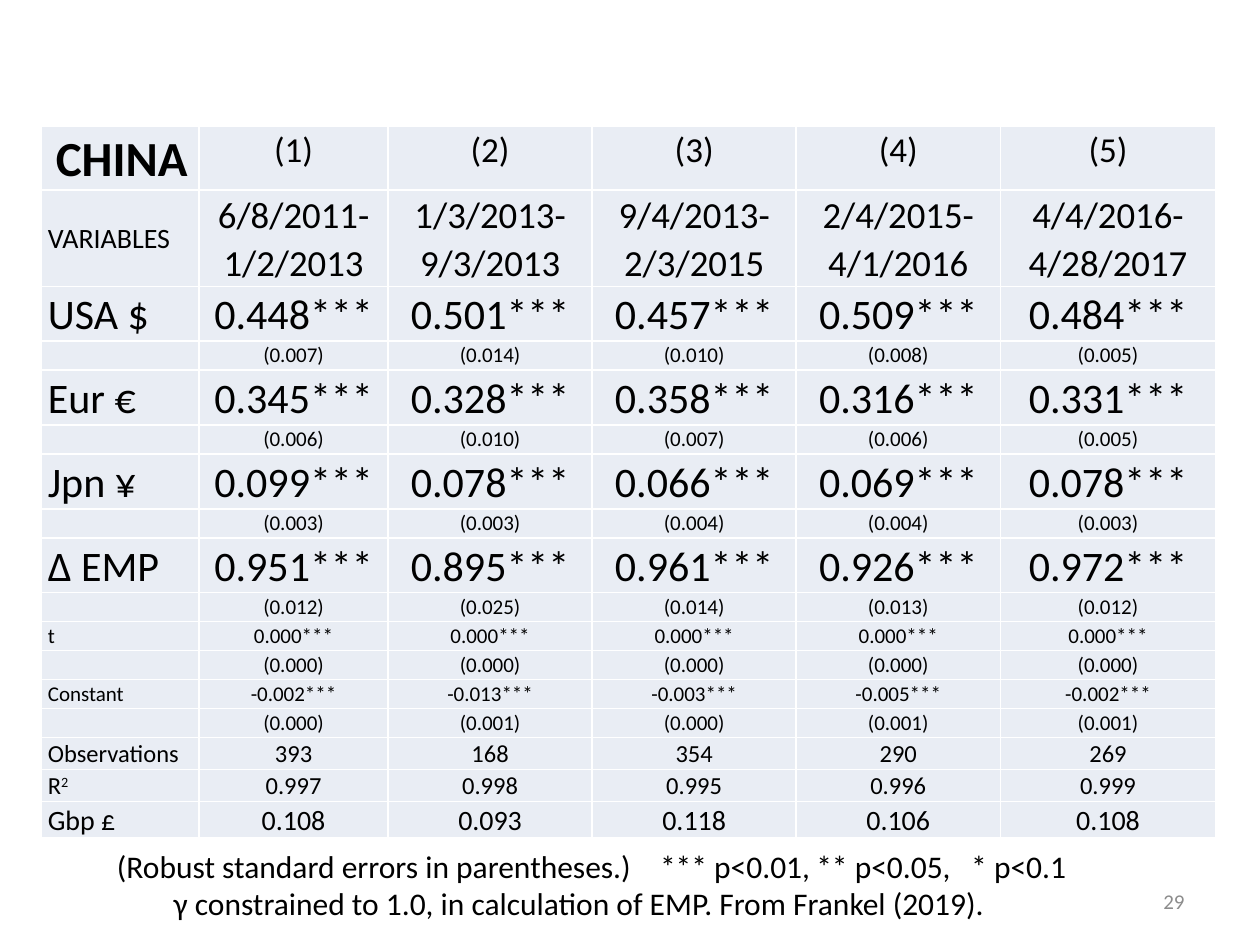
from dataclasses import dataclass

from lxml.etree import SubElement
from pptx import Presentation
from pptx.dml.color import RGBColor
from pptx.enum.text import MSO_ANCHOR as Anchor, PP_ALIGN as Align
from pptx.oxml.ns import qn
from pptx.util import Inches, Pt

FONT = "Calibri"
COLORS = {"text": "000000", "cell": "E9EDF4", "border": "FFFFFF", "number": "8C8C8C"}
COLUMN_WIDTHS = [1.25, 1.5, 1.62, 1.62, 1.62, 1.71]
ROW_HEIGHT = 0.23
PERIOD_ROW_HEIGHT = 0.47


@dataclass
class Run:
    text: str
    size: float
    bold: bool = False
    superscript: bool = False
    color: str = "text"


@dataclass
class TableRow:
    label: list[Run]
    values: list[str]
    size: float
    height: float = ROW_HEIGHT
    label_anchor: Anchor = Anchor.TOP


def value_row(label: str, values: str, size: float) -> TableRow:
    return TableRow([Run(label, size)] if label else [], values.split(), size)


ROWS = [
    TableRow([Run(" ", 20), Run("CHINA", 28, bold=True)],
             [f"({number})" for number in range(1, 6)], 20),
    TableRow([Run("VARIABLES", 16)],
             ["6/8/2011-1/2/2013", "1/3/2013-9/3/2013", "9/4/2013-2/3/2015",
              "2/4/2015-4/1/2016", "4/4/2016-4/28/2017"],
             21, PERIOD_ROW_HEIGHT, Anchor.MIDDLE),
    value_row("USA $", "0.448*** 0.501*** 0.457*** 0.509*** 0.484***", 24),
    value_row("", "(0.007) (0.014) (0.010) (0.008) (0.005)", 12),
    value_row("Eur €", "0.345*** 0.328*** 0.358*** 0.316*** 0.331***", 24),
    value_row("", "(0.006) (0.010) (0.007) (0.006) (0.005)", 12),
    value_row("Jpn ¥", "0.099*** 0.078*** 0.066*** 0.069*** 0.078***", 24),
    value_row("", "(0.003) (0.003) (0.004) (0.004) (0.003)", 12),
    value_row("Δ EMP", "0.951*** 0.895*** 0.961*** 0.926*** 0.972***", 24),
    value_row("", "(0.012) (0.025) (0.014) (0.013) (0.012)", 12),
    value_row("t", "0.000*** 0.000*** 0.000*** 0.000*** 0.000***", 12),
    value_row("", "(0.000) (0.000) (0.000) (0.000) (0.000)", 12),
    value_row("Constant", "-0.002*** -0.013*** -0.003*** -0.005*** -0.002***", 12),
    value_row("", "(0.000) (0.001) (0.000) (0.001) (0.001)", 12),
    value_row("Observations", "393 168 354 290 269", 14),
    TableRow([Run("R", 14), Run("2", 14, superscript=True)],
             ["0.997", "0.998", "0.995", "0.996", "0.999"], 14),
    value_row("Gbp £", "0.108 0.093 0.118 0.106 0.108", 16),
]


def add_runs(paragraph, runs: list[Run]) -> None:
    for item in runs:
        run = paragraph.add_run()
        run.text = item.text
        run.font.name = FONT
        run.font.size = Pt(item.size)
        run.font.bold = item.bold
        run.font.color.rgb = RGBColor.from_string(COLORS[item.color])
        if item.superscript:
            run.font._element.set("baseline", "30000")


def add_borders(cell) -> None:
    properties = cell._tc.get_or_add_tcPr()
    for side in ("lnL", "lnR", "lnT", "lnB"):
        line = SubElement(properties, qn(f"a:{side}"), w=str(Pt(1)))
        fill = SubElement(line, qn("a:solidFill"))
        SubElement(fill, qn("a:srgbClr"), val=COLORS["border"])


def fill_cell(cell, runs: list[Run], size: float, align: Align, anchor: Anchor) -> None:
    add_borders(cell)
    cell.fill.solid()
    cell.fill.fore_color.rgb = RGBColor.from_string(COLORS["cell"])
    cell.margin_left = cell.margin_right = Inches(0.05)
    cell.margin_top = cell.margin_bottom = 0
    cell.vertical_anchor = anchor
    paragraph = cell.text_frame.paragraphs[0]
    paragraph.alignment = align
    paragraph.line_spacing = 1.07
    add_runs(paragraph, runs)
    if not runs:
        SubElement(paragraph._p, qn("a:endParaRPr"), sz=str(int(size * 100)))


def add_results_table(slide) -> None:
    frame = slide.shapes.add_table(
        len(ROWS), len(COLUMN_WIDTHS), Inches(0.33), Inches(1), Inches(9.33), Inches(5.45))
    table = frame.table
    table.first_row = table.horz_banding = False
    for column, width in zip(table.columns, COLUMN_WIDTHS):
        column.width = Inches(width)
    for table_row, row in zip(table.rows, ROWS):
        table_row.height = Inches(row.height)
        label_cell, *value_cells = table_row.cells
        fill_cell(label_cell, row.label, row.size, Align.LEFT, row.label_anchor)
        for cell, value in zip(value_cells, row.values):
            fill_cell(cell, [Run(value, row.size)], row.size, Align.CENTER, Anchor.TOP)
    frame.height = Inches(5.45)


def add_text_frame(slide, left: float, top: float, width: float, height: float):
    box = slide.shapes.add_textbox(Inches(left), Inches(top), Inches(width), Inches(height))
    box.text_frame.word_wrap = True
    return box.text_frame


def add_footnotes(slide) -> None:
    text_frame = add_text_frame(slide, 0.83, 6.67, 8.42, 0.71)
    significance = text_frame.paragraphs[0]
    add_runs(significance, [Run(
        "(Robust standard errors in parentheses.)\t*** p<0.01,\t** p<0.05,\t* p<0.1", 18)])
    tab_list = SubElement(significance._p.get_or_add_pPr(), qn("a:tabLst"))
    for position in (4.31, 5.55, 6.78):
        SubElement(tab_list, qn("a:tab"), pos=str(Inches(position)), algn="l")
    constraint = text_frame.add_paragraph()
    constraint._p.get_or_add_pPr().set("marL", str(Inches(0.45)))
    add_runs(constraint, [Run(
        "γ constrained to 1.0, in calculation of EMP. From Frankel (2019).", 18)])


def add_slide_number(slide) -> None:
    text_frame = add_text_frame(slide, 7.17, 6.95, 2.33, 0.4)
    text_frame.vertical_anchor = Anchor.MIDDLE
    paragraph = text_frame.paragraphs[0]
    paragraph.alignment = Align.RIGHT
    add_runs(paragraph, [Run("29", 12, color="number")])


def main() -> None:
    presentation = Presentation()
    presentation.slide_width = Inches(10)
    presentation.slide_height = Inches(7.5)
    slide = presentation.slides.add_slide(presentation.slide_layouts[6])
    add_results_table(slide)
    add_slide_number(slide)
    add_footnotes(slide)
    presentation.save("out.pptx")


if __name__ == "__main__":
    main()
